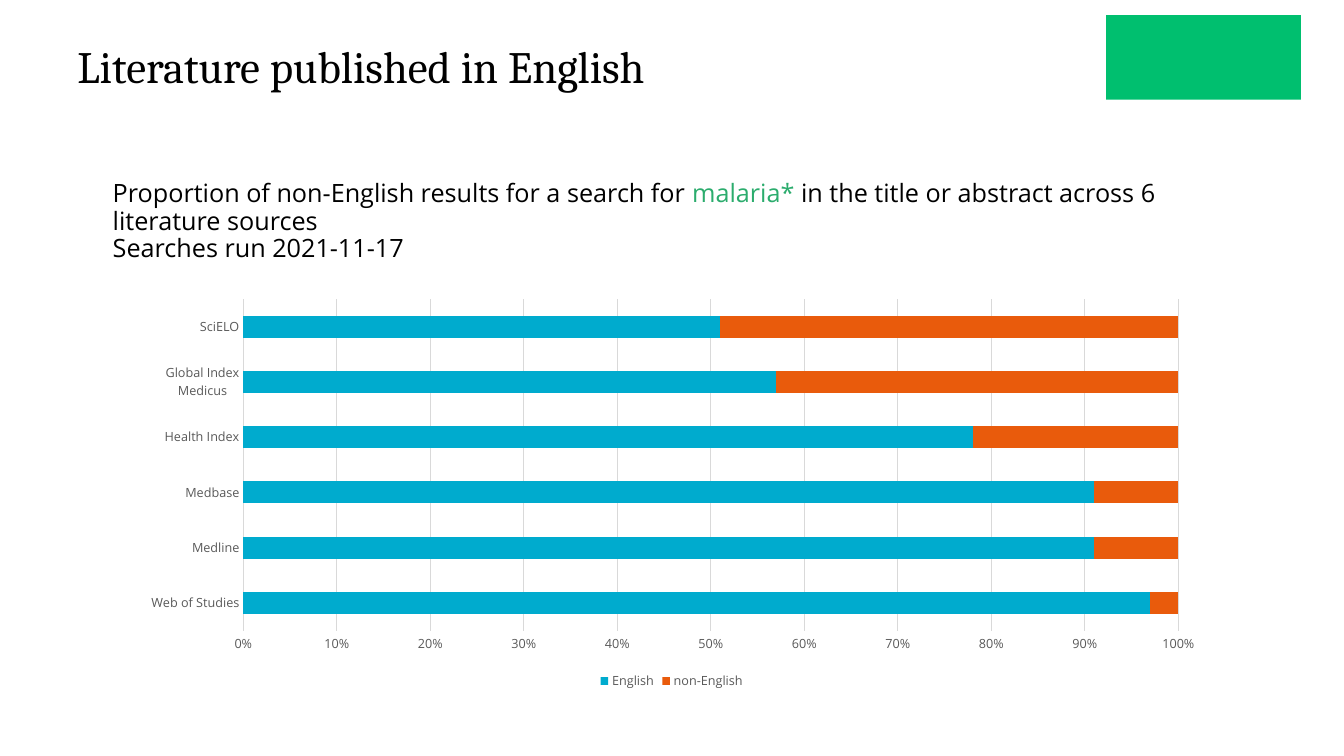
from lxml.etree import SubElement
from pptx import Presentation
from pptx.chart.data import CategoryChartData
from pptx.dml.color import RGBColor
from pptx.enum.chart import XL_CHART_TYPE, XL_LEGEND_POSITION, XL_TICK_MARK
from pptx.enum.shapes import MSO_SHAPE
from pptx.enum.text import MSO_ANCHOR, PP_ALIGN
from pptx.oxml.ns import qn
from pptx.util import Inches, Pt

BLACK = RGBColor(0x00, 0x00, 0x00)
GREY = RGBColor(0x59, 0x59, 0x59)
GRID = RGBColor(0xD9, 0xD9, 0xD9)
BADGE = RGBColor(0x00, 0xBF, 0x6F)
TERM = RGBColor(0x2B, 0xAC, 0x6D)
BLUE = RGBColor(0x00, 0xAB, 0xCE)
ORANGE = RGBColor(0xE9, 0x5B, 0x0C)

ENGLISH_SHARE = {
    "Web of Studies": 97,
    "Medline": 91,
    "Medbase": 91,
    "Health Index": 78,
    "Global Index Medicus": 57,
    "SciELO": 51,
}


class Deck:
    heading_font = "Cambria"
    body_font = "Open Sans"

    def __init__(self):
        self.prs = Presentation()
        self.prs.slide_width = Inches(13.33)
        self.prs.slide_height = Inches(7.5)
        self.s = self.prs.slides.add_slide(self.prs.slide_layouts[5])

    def box(self, x, y, w, h):
        width, height = self.prs.slide_width, self.prs.slide_height
        return [int(v / 100 * side) for v, side in
                ((x, width), (y, height), (w, width), (h, height))]

    def style(self, font, size, color, name=None):
        font.size = Pt(size)
        font.name = name or self.body_font
        font.color.rgb = color

    def block(self, area, color):
        sp = self.s.shapes.add_shape(MSO_SHAPE.RECTANGLE, *self.box(*area))
        sp.shadow.inherit = False
        sp.fill.solid()
        sp.fill.fore_color.rgb = color
        sp.line.fill.background()

    def title(self, area, text):
        sp = self.s.shapes.title
        sp.left, sp.top, sp.width, sp.height = self.box(*area)
        tf = sp.text_frame
        tf.text = text
        tf.vertical_anchor = MSO_ANCHOR.MIDDLE
        p = tf.paragraphs[0]
        p.alignment = PP_ALIGN.LEFT
        self.style(p.font, 32, BLACK, self.heading_font)

    def text(self, area, paragraphs):
        tf = self.s.shapes.add_textbox(*self.box(*area)).text_frame
        tf.word_wrap = True
        for i, runs in enumerate(paragraphs):
            p = tf.add_paragraph() if i else tf.paragraphs[0]
            p.line_spacing = 0.9
            self.style(p.font, 18, BLACK)
            for text, color in runs:
                r = p.add_run()
                r.text = text
                r.font.color.rgb = color

    def stacked_bars(self, area, categories, series, plot_area):
        data = CategoryChartData(number_format="0")
        data.categories = categories
        for name, values, _ in series:
            data.add_series(name, values)
        chart = self.s.shapes.add_chart(
            XL_CHART_TYPE.BAR_STACKED_100, *self.box(*area), data).chart
        self.style(chart.font, 9, GREY)
        chart.has_title = False
        chart.has_legend = True
        chart.legend.position = XL_LEGEND_POSITION.BOTTOM
        chart.legend.include_in_layout = False
        self.style(chart.legend.font, 9, GREY)
        plot = chart.plots[0]
        plot.gap_width, plot.overlap = 150, 100
        for bars, (_, _, color) in zip(plot.series, series):
            bars.format.fill.solid()
            bars.format.fill.fore_color.rgb = color
        for axis in (chart.category_axis, chart.value_axis):
            axis.major_tick_mark = axis.minor_tick_mark = XL_TICK_MARK.NONE
            self.style(axis.tick_labels.font, 9, GREY)
        values = chart.value_axis
        values.minimum_scale, values.maximum_scale = 0, 1
        values.major_unit = 0.1
        values.tick_labels.number_format = "0%"
        values.tick_labels.number_format_is_linked = False
        values.format.line.fill.background()
        values.has_major_gridlines = True
        for line in (values.major_gridlines.format.line,
                     chart.category_axis.format.line):
            line.color.rgb = GRID
            line.width = Pt(0.75)
        self.place_plot(chart, plot_area)

    def place_plot(self, chart, plot_area):
        area = chart.element.find(f".//{qn('c:plotArea')}")
        layout = area.find(qn("c:layout"))
        if layout is None:
            layout = SubElement(area, qn("c:layout"))
            area.insert(0, layout)
        manual = SubElement(layout, qn("c:manualLayout"))
        settings = [("layoutTarget", "inner"), ("xMode", "edge"), ("yMode", "edge")]
        settings += zip("xywh", plot_area)
        for tag, value in settings:
            SubElement(manual, qn(f"c:{tag}")).set("val", str(value))


def main():
    deck = Deck()
    deck.block((82.3, 2, 14.5, 11.2), BADGE)
    deck.title((5, 4.1, 72.5, 9.1), "Literature published in English")
    deck.text((7.65, 23.3, 79.2, 13.5), [
        [("Proportion of non-English results for a search for ", BLACK),
         ("malaria* ", TERM),
         ("in the title or abstract across 6 literature sources", BLACK)],
        [("Searches run 2021-11-17", BLACK)],
    ])
    english = list(ENGLISH_SHARE.values())
    deck.stacked_bars(
        (9.53, 38.5, 80.9, 53.3), list(ENGLISH_SHARE),
        [("English", english, BLUE),
         ("non-English", [100 - share for share in english], ORANGE)],
        (0.106, 0.02, 0.86, 0.823))
    deck.prs.save("out.pptx")


if __name__ == "__main__":
    main()
